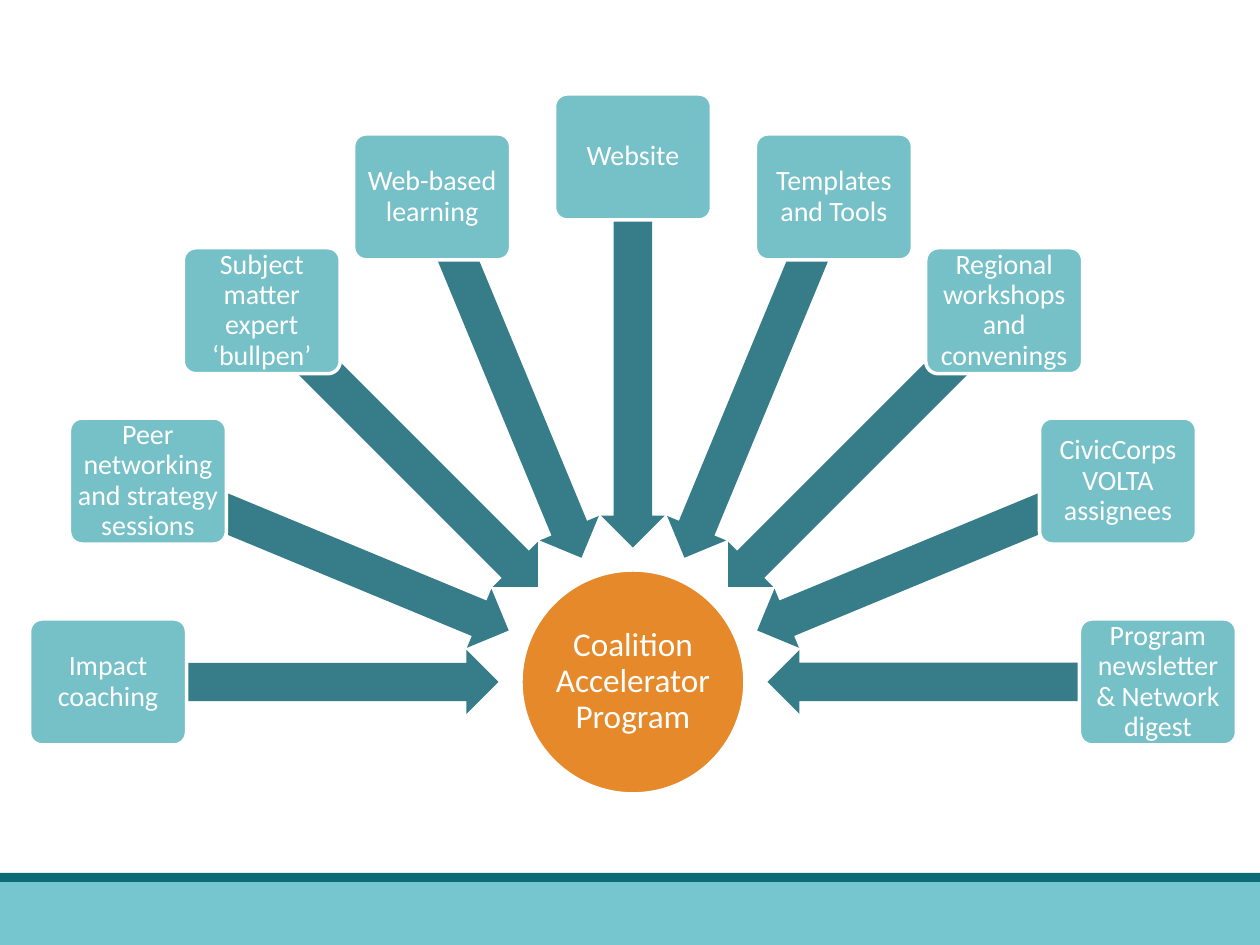
import math
import pptx
import pptx.util
import pptx.dml.color
import pptx.enum.shapes
import pptx.enum.text

PX = 914400 // 126  # EMU per px
SHAPE = pptx.enum.shapes.MSO_SHAPE
COLORS = {"band": "75C6CF", "rule": "0C6B75", "hub": "E5892A",
          "box": "76C0C7", "arrow": "377D89", "white": "FFFFFF"}


def add_shape(kind, x, y, w, h, fill, outlined=False):
    sp = s.shapes.add_shape(kind, *(round(v * PX) for v in (x, y, w, h)))
    sp.shadow.inherit = False
    sp.fill.solid()
    sp.fill.fore_color.rgb = pptx.dml.color.RGBColor.from_string(COLORS[fill])
    if outlined:
        sp.line.color.rgb = pptx.dml.color.RGBColor.from_string(COLORS["white"])
        sp.line.width = pptx.util.Pt(2)
    else:
        sp.line.fill.background()
    return sp


def write(sp, text, size, inset):
    tf = sp.text_frame
    tf.word_wrap = True
    tf.vertical_anchor = pptx.enum.text.MSO_ANCHOR.MIDDLE
    tf.margin_left = tf.margin_right = tf.margin_top = tf.margin_bottom = inset * PX
    p = tf.paragraphs[0]
    p.text = text
    p.alignment = pptx.enum.text.PP_ALIGN.CENTER
    p.line_spacing = 0.9
    p.font.name = "Calibri"
    p.font.size = pptx.util.Pt(size)
    p.font.color.rgb = pptx.dml.color.RGBColor.from_string(COLORS["white"])


prs = pptx.Presentation()
prs.slide_width = 1260 * PX
prs.slide_height = 945 * PX
s = prs.slides.add_slide(prs.slide_layouts[6])

# Footer band
add_shape(SHAPE.RECTANGLE, 0, 882, 1260, 63, "band")
add_shape(SHAPE.RECTANGLE, 0, 873, 1260, 9, "rule")

# Hub
CX, CY, HUB = 633, 682, 224
hub = add_shape(SHAPE.OVAL, CX - HUB / 2, CY - HUB / 2, HUB, HUB, "hub", True)
write(hub, "Coalition Accelerator Program", 19, 1)

# Boxes on a half circle, each with an arrow to the hub
BOX_RADIUS, BOX_W, BOX_H = 525, 157, 126
ARROW_RADIUS, ARROW_W, ARROW_H = 330, 391, 64
labels = ["Impact coaching", "Peer networking and strategy sessions",
          "Subject matter expert ‘bullpen’", "Web-based learning", "Website",
          "Templates and Tools", "Regional workshops and convenings",
          "CivicCorps VOLTA assignees", "Program newsletter & Network digest"]
step = 180 / (len(labels) - 1)

for i, label in enumerate(labels):
    angle = 180 + i * step
    dx, dy = math.cos(math.radians(angle)), math.sin(math.radians(angle))

    arrow = add_shape(SHAPE.LEFT_ARROW, CX + ARROW_RADIUS * dx - ARROW_W / 2,
                      CY + ARROW_RADIUS * dy - ARROW_H / 2, ARROW_W, ARROW_H, "arrow")
    arrow.adjustments[0] = 0.6
    arrow.adjustments[1] = 0.5
    arrow.rotation = angle % 360

    box = add_shape(SHAPE.ROUNDED_RECTANGLE, CX + BOX_RADIUS * dx - BOX_W / 2,
                    CY + BOX_RADIUS * dy - BOX_H / 2, BOX_W, BOX_H, "box", True)
    box.adjustments[0] = 0.1
    write(box, label, 16, 4)

prs.save("out.pptx")
